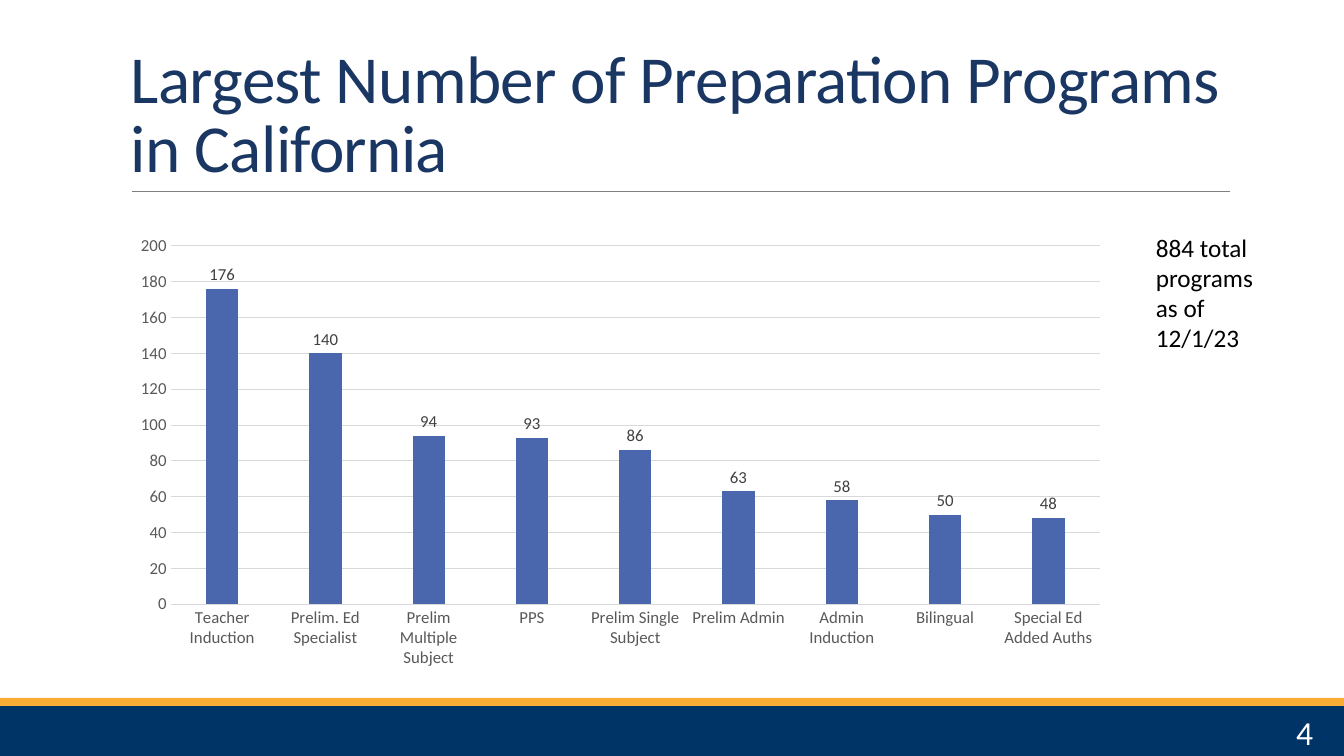
import pptx
import pptx.chart.data
import pptx.dml.color
import pptx.enum.chart
import pptx.enum.shapes
import pptx.enum.text
import pptx.oxml.ns
import pptx.util
from lxml import etree

SCALE = 12192000 / 1344
ANCHOR = pptx.enum.text.MSO_ANCHOR
ALIGN = pptx.enum.text.PP_ALIGN


def px(*sizes):
    return [pptx.util.Emu(round(size * SCALE)) for size in sizes]


def color(code):
    return pptx.dml.color.RGBColor.from_string(code)


class Deck:
    face = "Calibri"
    navy = "1A3763"
    grid = "D9D9D9"
    gray = "595959"

    def __init__(self):
        self.show = pptx.Presentation()
        self.show.slide_width, self.show.slide_height = px(1344, 756)
        self.slide = self.show.slides.add_slide(self.show.slide_layouts[6])

    def style(self, font, size, code):
        font.name = self.face
        font.size = pptx.util.Pt(size)
        font.color.rgb = color(code)

    def stroke(self, line, code, width):
        line.color.rgb = color(code)
        line.width = pptx.util.Pt(width)

    def bar(self, box, code):
        kind = pptx.enum.shapes.MSO_SHAPE.RECTANGLE
        shape = self.slide.shapes.add_shape(kind, *px(*box))
        shape.shadow.inherit = False
        shape.fill.solid()
        shape.fill.fore_color.rgb = color(code)
        shape.line.fill.background()

    def rule(self, ends, code, width):
        kind = pptx.enum.shapes.MSO_CONNECTOR.STRAIGHT
        line = self.slide.shapes.add_connector(kind, *px(*ends))
        self.stroke(line.line, code, width)
        etree.SubElement(line._element.spPr, pptx.oxml.ns.qn("a:effectLst"))

    def text(self, box, words, size, code, anchor=ANCHOR.TOP,
             align=ALIGN.LEFT, lead=None, track=None):
        frame = self.slide.shapes.add_textbox(*px(*box)).text_frame
        frame.word_wrap = True
        frame.vertical_anchor = anchor
        frame.text = words
        para = frame.paragraphs[0]
        para.alignment = align
        para.line_spacing = lead
        run = para.runs[0]
        self.style(run.font, size, code)
        if track:
            run._r.get_or_add_rPr().set("spc", str(track))

    def chart(self, box, name, counts, code):
        enum = pptx.enum.chart
        data = pptx.chart.data.CategoryChartData()
        data.categories = list(counts)
        data.add_series(name, list(counts.values()))
        kind = enum.XL_CHART_TYPE.COLUMN_CLUSTERED
        chart = self.slide.shapes.add_chart(kind, *px(*box), data).chart
        chart.has_title = False
        chart.has_legend = False
        self.style(chart.font, 10, "000000")
        for axis in (chart.category_axis, chart.value_axis):
            axis.major_tick_mark = enum.XL_TICK_MARK.NONE
            axis.minor_tick_mark = enum.XL_TICK_MARK.NONE
            self.style(axis.tick_labels.font, 12, self.gray)
        self.stroke(chart.category_axis.format.line, self.grid, 0.75)
        scale = chart.value_axis
        scale.minimum_scale, scale.maximum_scale = 0, 200
        scale.major_unit = 20
        scale.format.line.fill.background()
        self.stroke(scale.major_gridlines.format.line, self.grid, 0.75)
        plot = chart.plots[0]
        plot.gap_width, plot.overlap = 219, -27
        plot.vary_by_categories = False
        fill = plot.series[0].format.fill
        fill.solid()
        fill.fore_color.rgb = color(code)
        labels = plot.series[0].data_labels
        labels.show_value = True
        labels.position = enum.XL_LABEL_POSITION.OUTSIDE_END
        self.style(labels.font, 12, "404040")


def main():
    deck = Deck()
    deck.bar((0, 706, 1344, 50), "003366")
    deck.bar((0, 698, 1344, 8), "FAAC35")
    deck.rule((132, 191, 1230, 191), "808080", 0.5)
    deck.text((121, 31, 1109, 160),
              "Largest Number of Preparation Programs in California",
              48, deck.navy, anchor=ANCHOR.BOTTOM, lead=0.85, track=-50)
    deck.text((1179, 712, 144, 40), "4", 24, "FFFFFF",
              anchor=ANCHOR.MIDDLE, align=ALIGN.RIGHT)
    counts = {
        "Teacher Induction": 176,
        "Prelim. Ed Specialist": 140,
        "Prelim Multiple Subject": 94,
        "PPS": 93,
        "Prelim Single Subject": 86,
        "Prelim Admin": 63,
        "Admin Induction": 58,
        "Bilingual": 50,
        "Special Ed Added Auths": 48,
    }
    deck.chart((121, 227, 999, 450), "Series 1", counts, "4A66AC")
    deck.text((1146, 227, 144, 132), "884 total programs as of 12/1/23",
              18, "000000")
    deck.show.save("out.pptx")


if __name__ == "__main__":
    main()
